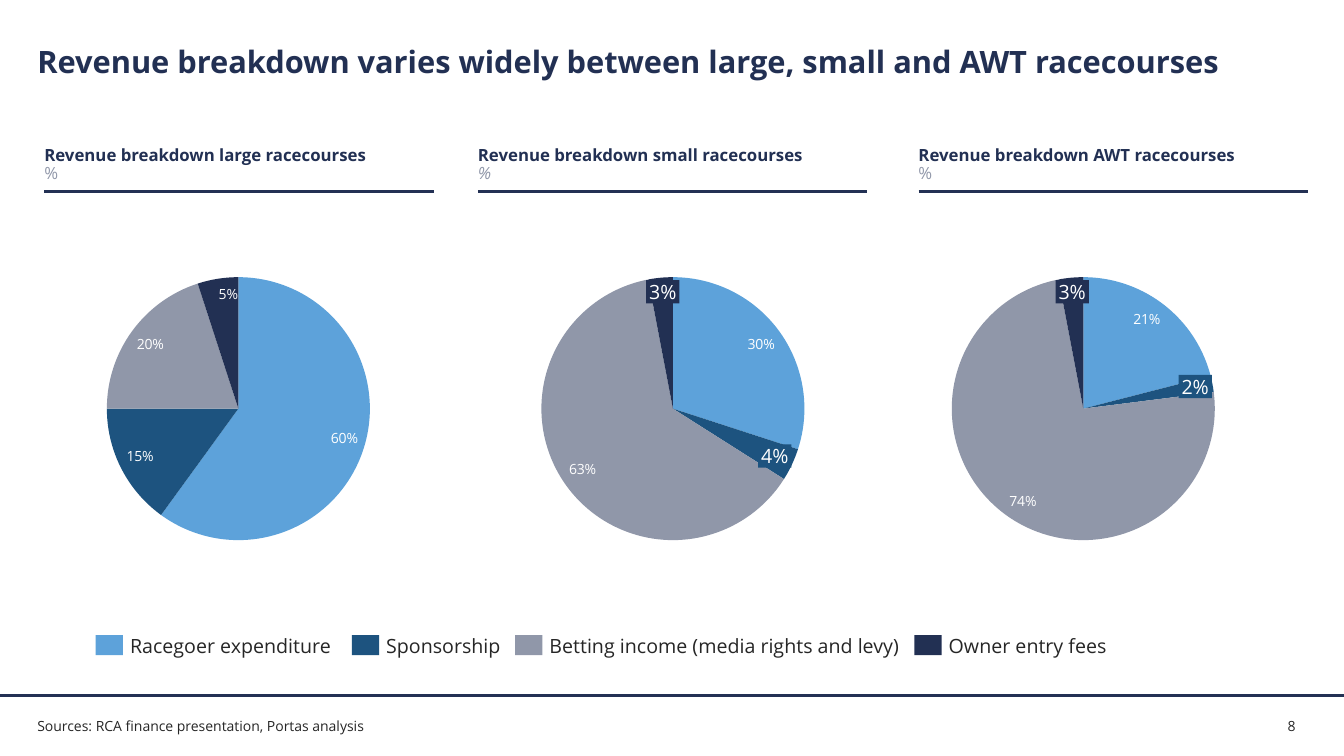
from lxml import etree
from pptx import Presentation, util as u
from pptx.chart.data import CategoryChartData
from pptx.dml.color import RGBColor
from pptx.enum import chart as charts, shapes, text
from pptx.oxml import ns, parse_xml

# Content
TITLE = "Revenue breakdown varies widely between large, small and AWT racecourses"
SOURCES = "Sources: RCA finance presentation, Portas analysis"
PAGE_NUMBER = "8"
FONT = "Open Sans"
COLORS = {"navy": "223053", "rule": "233154", "sky": "5DA2DA", "teal": "1D537F",
          "grey": "9097A9", "ink": "262626", "white": "FFFFFF"}
# name, colour, label width
STREAMS = [("Racegoer expenditure", "sky", 2.05),
           ("Sponsorship", "teal", 1.13),
           ("Betting income (media rights and levy)", "grey", 3.47),
           ("Owner entry fees", "navy", 1.56)]
# callouts: stream index -> left, top of a label set on a thin slice
PANELS = [
    {"name": "large", "left": 0.44, "pie": 0.75, "shares": (60, 15, 20, 5),
     "callouts": {}},
    {"name": "small", "left": 4.74, "pie": 5.06, "shares": (30, 4, 63, 3),
     "italic": True, "callouts": {1: (7.52, 4.41), 3: (6.41, 2.78)}},
    {"name": "AWT", "left": 9.11, "pie": 9.13, "shares": (21, 2, 74, 3),
     "callouts": {1: (11.69, 3.72), 3: (10.47, 2.78)}},
]

# Layout, in inches
WIDTH, HEIGHT = 13.33, 7.5
MARGIN = 0.37
FOOTER_Y = HEIGHT * 0.92
HEADING_Y, HEADING_RULE_Y, HEADING_W = 1.46, 1.9, 3.86
PIE_Y, PIE_W, PIE_H = 2.63, 3.23, 2.85
PIE_AREA = {"x": 0.096, "y": 0.042, "w": 0.808, "h": 0.916}
LEGEND_X, LEGEND_Y, SWATCH_W, SWATCH_H = 0.95, 6.3, 0.27, 0.2
LABEL_OFFSET, LEGEND_GAP = 0.34, 0.15


def rgb(name):
    return RGBColor.from_string(COLORS[name])


def inches(*lengths):
    return [u.Inches(length) for length in lengths]


def write(box, lines, size=10, color="ink", bold=False, italic=False, align=None,
          anchor=text.MSO_ANCHOR.TOP, wrap=True, inset=0, spacing=None):
    """Fill a shape; each line is a string or (string, format overrides)."""
    frame = box.text_frame
    frame.auto_size = text.MSO_AUTO_SIZE.NONE
    frame.word_wrap, frame.vertical_anchor = wrap, anchor
    frame.margin_left = frame.margin_right = u.Inches(inset)
    frame.margin_top = frame.margin_bottom = 0
    for row, line in enumerate(lines):
        words, changes = (line, {}) if isinstance(line, str) else line
        look = {"color": color, "bold": bold, "italic": italic, **changes}
        para = frame.add_paragraph() if row else frame.paragraphs[0]
        para.alignment = align or text.PP_ALIGN.LEFT
        para.line_spacing = spacing
        span = para.add_run()
        span.text = words
        span.font.name, span.font.size = FONT, u.Pt(size)
        span.font.bold, span.font.italic = look["bold"], look["italic"]
        span.font.color.rgb = rgb(look["color"])


def add_text(page, place, lines, **look):
    write(page.shapes.add_textbox(*inches(*place)), lines, **look)


def add_rule(page, left, top, width, weight):
    rule = page.shapes.add_connector(
        shapes.MSO_CONNECTOR.STRAIGHT, *inches(left, top, left + width, top))
    rule.line.color.rgb, rule.line.width = rgb("rule"), u.Pt(weight)
    etree.SubElement(rule._element.spPr, ns.qn("a:effectLst"))


def add_block(page, place, color):
    block = page.shapes.add_shape(shapes.MSO_SHAPE.RECTANGLE, *inches(*place))
    block.shadow.inherit = False
    block.fill.solid()
    block.fill.fore_color.rgb = rgb(color)
    block.line.fill.background()
    return block


def add_pie(page, panel):
    data = CategoryChartData()
    data.categories = [name for name, _, _ in STREAMS]
    data.add_series("Revenue share", panel["shares"])
    chart = page.shapes.add_chart(charts.XL_CHART_TYPE.PIE,
                                  *inches(panel["pie"], PIE_Y, PIE_W, PIE_H), data).chart
    chart.has_legend = chart.has_title = False
    chart.font.name, chart.font.size = FONT, u.Pt(10)
    chart.font.color.rgb = rgb("ink")
    chart.plots[0].vary_by_categories = True
    series = chart.plots[0].series[0]
    for index, (_, color, _) in enumerate(STREAMS):
        look = series.points[index].format
        look.fill.solid()
        look.fill.fore_color.rgb = rgb(color)
        look.line.fill.background()

    # Share labels, left off where a callout stands
    labels = series.data_labels
    labels.show_value = True
    labels.number_format, labels.number_format_is_linked = '0"%"', False
    labels.position = charts.XL_LABEL_POSITION.INSIDE_END
    labels.font.name, labels.font.size = FONT, u.Pt(10)
    labels.font.color.rgb = rgb("white")
    for order, index in enumerate(panel["callouts"]):
        labels._element.insert(order, parse_xml(
            f'<c:dLbl {ns.nsdecls("c")}><c:idx val="{index}"/><c:delete val="1"/></c:dLbl>'))

    # Fixed plot area
    area = chart._chartSpace.chart.plotArea
    for old in area.findall(ns.qn("c:layout")):
        area.remove(old)
    sides = "".join(f'<c:{side} val="{share}"/>' for side, share in PIE_AREA.items())
    area.insert(0, parse_xml(
        f'<c:layout {ns.nsdecls("c")}><c:manualLayout><c:layoutTarget val="inner"/>'
        f'<c:xMode val="edge"/><c:yMode val="edge"/>{sides}</c:manualLayout></c:layout>'))


def add_panel(page, panel):
    add_rule(page, panel["left"], HEADING_RULE_Y, HEADING_W, 1.5)
    unit = {"color": "grey", "bold": False, "italic": panel.get("italic", False)}
    add_text(page, (panel["left"], HEADING_Y, HEADING_W, 0.4),
             [f"Revenue breakdown {panel['name']} racecourses", ("%", unit)],
             size=12, color="navy", bold=True, spacing=0.9)
    add_pie(page, panel)
    for index, (left, top) in panel["callouts"].items():
        block = add_block(page, (left, top, 0.33, 0.23), STREAMS[index][1])
        write(block, [f"{panel['shares'][index]}%"], size=14, color="white", inset=0.03,
              align=text.PP_ALIGN.CENTER, anchor=text.MSO_ANCHOR.MIDDLE, wrap=False)


def add_legend(page):
    left = LEGEND_X
    for name, color, width in STREAMS:
        add_block(page, (left, LEGEND_Y, SWATCH_W, SWATCH_H), color)
        add_text(page, (left + LABEL_OFFSET, LEGEND_Y - 0.01, width, 0.23), [name],
                 size=14, anchor=text.MSO_ANCHOR.MIDDLE, wrap=False)
        left += LABEL_OFFSET + width + LEGEND_GAP


def main():
    deck = Presentation()
    deck.slide_width, deck.slide_height = inches(WIDTH, HEIGHT)
    page = deck.slides.add_slide(deck.slide_layouts.get_by_name("Title Only"))

    # Title
    title = page.shapes.title
    title.left, title.top, title.width, title.height = inches(
        MARGIN, 0.45, WIDTH - 2 * MARGIN, 0.82)
    write(title, [TITLE], size=22, color="navy", bold=True, spacing=0.95)

    # Pies and legend
    for panel in PANELS:
        add_panel(page, panel)
    add_legend(page)

    # Footer
    add_rule(page, 0, FOOTER_Y, WIDTH, 2)
    add_text(page, (MARGIN, 7.01, 11.23, 0.39), [SOURCES], anchor=text.MSO_ANCHOR.MIDDLE)
    add_text(page, (12.77, 7.09, 0.5, 0.2), [PAGE_NUMBER], anchor=text.MSO_ANCHOR.BOTTOM)
    deck.save("out.pptx")


if __name__ == "__main__":
    main()
